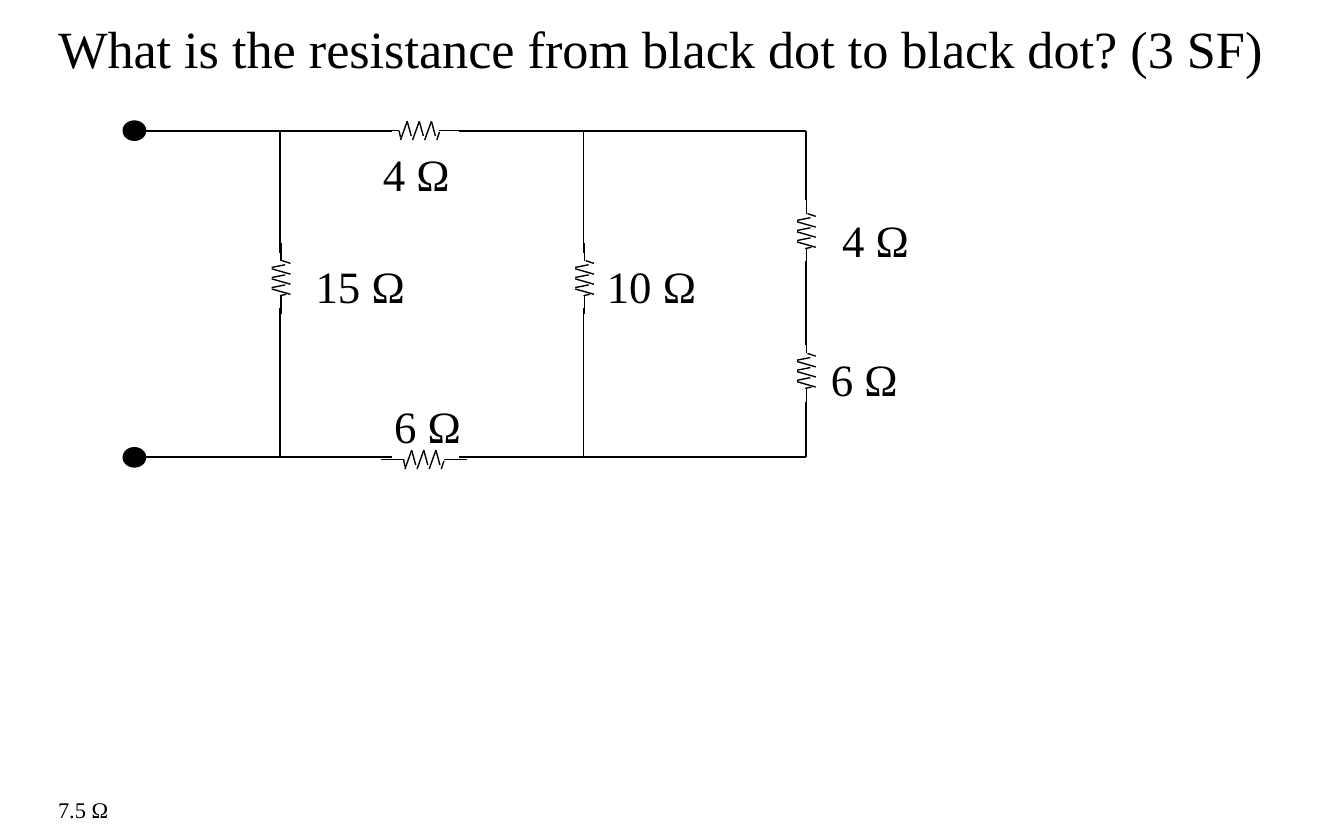
from collections import namedtuple

from lxml.etree import SubElement
from pptx import Presentation
from pptx.dml.color import RGBColor
from pptx.enum.shapes import MSO_CONNECTOR, MSO_SHAPE
from pptx.enum.text import MSO_ANCHOR, MSO_AUTO_SIZE, PP_ALIGN
from pptx.oxml.ns import qn
from pptx.util import Inches, Pt

Box = namedtuple("Box", "left top width height")

CELLS_PER_INCH = 12
INK = "000000"
FONT = "Times New Roman"
DOT_SIZE = (2, 1.72)
WIRE_WIDTH, RESISTOR_WIDTH = 1, 0.75
TEETH = 3

UPRIGHT = {
    "tooth": [(0.36, 1.92, -0.84, 2.16), (-0.84, 2.28, 0.84, 2.76)],
    "pitch": (0, 0.9),
    "ends": [(0.1, 1.56, 0.84, 1.8), (0.45, 4.56, -0.1, 4.68),
             (0, 0, 0, 1.56), (0, 4.68, 0, 6.36)],
}
LEVEL = {
    "tooth": [(3.12, 0.48, 2.76, -0.84), (2.76, -0.84, 2.16, 0.84)],
    "pitch": (1.08, 0),
    "ends": [(2.16, 0.6, 2.04, 0), (5.64, 0.12, 5.4, 0.84),
             (0, 0, 2.04, 0), (5.64, 0, 7.68, 0)],
}


def cells(count):
    """Turn a count of grid cells into a slide length."""
    return Inches(count / CELLS_PER_INCH)


def colour(hex_value):
    """Turn a hex string into a colour."""
    return RGBColor.from_string(hex_value)


def write(shape, words, size, wrap):
    """Fill a shape with one left-aligned line of words."""
    frame = shape.text_frame
    frame.text = words
    frame_format = {
        "word_wrap": wrap,
        "auto_size": MSO_AUTO_SIZE.NONE if wrap else MSO_AUTO_SIZE.SHAPE_TO_FIT_TEXT,
        "vertical_anchor": MSO_ANCHOR.TOP,
    }
    for attribute, value in frame_format.items():
        setattr(frame, attribute, value)
    paragraph = frame.paragraphs[0]
    paragraph.alignment = PP_ALIGN.LEFT
    font = paragraph.runs[0].font
    for attribute, value in {"name": FONT, "size": Pt(size)}.items():
        setattr(font, attribute, value)
    font.color.rgb = colour(INK)


def add_label(slide, box, words, size):
    """Place a short line of words in a box."""
    write(slide.shapes.add_textbox(*map(cells, box)), words, size, False)


def add_stroke(parent, origin, ends, width):
    """Draw a straight line whose ends are measured from an origin."""
    x, y = origin
    x1, y1, x2, y2 = ends
    stroke = parent.shapes.add_connector(
        MSO_CONNECTOR.STRAIGHT, *map(cells, (x + x1, y + y1, x + x2, y + y2)))
    stroke.line.color.rgb = colour(INK)
    stroke.line.width = Pt(width)
    SubElement(stroke.element.spPr, qn("a:effectLst"))


def add_resistor(slide, origin, design):
    """Draw a grouped zigzag resistor that starts at an origin."""
    resistor = slide.shapes.add_group_shape()
    dx, dy = design["pitch"]
    for step in range(TEETH):
        tooth_origin = origin[0] + step * dx, origin[1] + step * dy
        for ends in design["tooth"]:
            add_stroke(resistor, tooth_origin, ends, RESISTOR_WIDTH)
    for ends in design["ends"]:
        add_stroke(resistor, origin, ends, RESISTOR_WIDTH)


def add_terminal(slide, x, y):
    """Draw a black dot centred on a point."""
    width, height = DOT_SIZE
    dot = slide.shapes.add_shape(
        MSO_SHAPE.OVAL, *map(cells, (x - width / 2, y - height / 2, width, height)))
    dot.shadow.inherit = False
    dot.fill.solid()
    dot.fill.fore_color.rgb = colour(INK)
    dot.line.color.rgb = colour(INK)
    dot.line.width = Pt(0.75)


def add_question(slide, box, words):
    """Place the question in the title placeholder."""
    title = slide.shapes.title
    for attribute, value in zip(box._fields, map(cells, box)):
        setattr(title, attribute, value)
    write(title, words, 28, True)


def add_circuit(slide, box):
    """Draw the resistor network inside a box."""
    origin = box.left, box.top
    right, bottom = box.width, box.height
    branches = {
        13: [(0, 10.9), (15.8, bottom)],
        40.1: [(0, 10.9), (15.8, bottom)],
        right: [(0, 6.2), (11.6, 19.17), (24.2, bottom)],
    }
    wires = [(x, start, x, end) for x, spans in branches.items() for start, end in spans]
    wires += [(start, y, end, y) for y in (0, bottom)
              for start, end in [(0, 23), (29, right)]]
    for wire in wires:
        add_stroke(slide, origin, wire, WIRE_WIDTH)
    for y in (0, bottom):
        add_terminal(slide, box.left, box.top + y)

    resistors = [
        ("15 Ω", UPRIGHT, (13.1, 10.05), (15, 10.83)),
        ("10 Ω", UPRIGHT, (40.2, 10.05), (41, 10.83)),
        ("4 Ω", UPRIGHT, (right, 5.85), (62, 6.7)),
        ("6 Ω", UPRIGHT, (right, 18.33), (61, 19.17)),
        ("4 Ω", LEVEL, (21.6, 0), (21, 0.83)),
        ("6 Ω", LEVEL, (22, bottom + 0.2), (22, 23.37)),
    ]
    for words, design, (x, y), (label_x, label_y) in resistors:
        add_resistor(slide, (box.left + x, box.top + y), design)
        label_width = 2.1 * len(words) + 2.2
        add_label(slide, Box(box.left + label_x, box.top + label_y, label_width, 6),
                  words, 24)


def main():
    """Build the circuit question and save it."""
    deck = Presentation()
    deck.slide_width, deck.slide_height = cells(120), cells(75)
    slide = deck.slides.add_slide(deck.slide_layouts[5])
    add_question(slide, Box(4, 0.84, 112, 6.84),
                 "What is the resistance from black dot to black dot? (3 SF)")
    add_circuit(slide, Box(12, 11.67, 60, 29.17))
    add_label(slide, Box(4, 70.5, 6.96, 3.6), "7.5 Ω", 12)
    deck.save("out.pptx")


if __name__ == "__main__":
    main()
